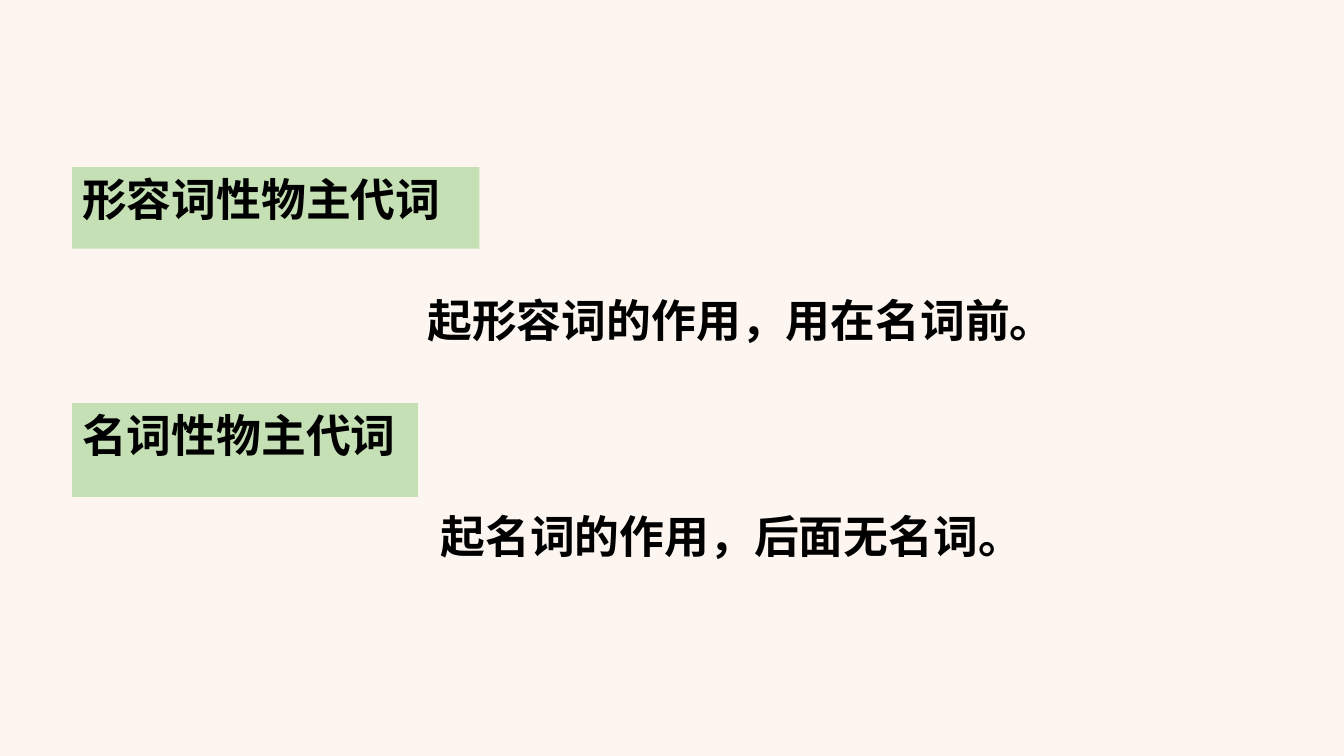
from dataclasses import dataclass

from lxml.etree import SubElement
from pptx import Presentation
from pptx.dml.color import RGBColor
from pptx.enum.shapes import MSO_SHAPE
from pptx.enum.text import MSO_ANCHOR, PP_ALIGN
from pptx.oxml.ns import qn
from pptx.util import Cm, Pt


@dataclass(frozen=True)
class Theme:
    background: RGBColor = RGBColor(0xFD, 0xF5, 0xEF)
    label: RGBColor = RGBColor(0xC5, 0xE0, 0xB4)
    text: RGBColor = RGBColor(0, 0, 0)
    font: str = "Comic Neue"
    size: Pt = Pt(32)


THEME = Theme()


def write_text(sp, text):
    tf = sp.text_frame
    tf.word_wrap = True
    tf.vertical_anchor = MSO_ANCHOR.TOP
    p = tf.paragraphs[0]
    p.text = text
    p.alignment = PP_ALIGN.LEFT
    font = p.font
    font.name = THEME.font
    font.size = THEME.size
    font.bold = True
    font.color.rgb = THEME.text
    # East Asian characters take their typeface from a:ea
    SubElement(p._p.pPr.find(qn("a:defRPr")), qn("a:ea"), typeface=THEME.font)


def add_label(slide, text, box):
    sp = slide.shapes.add_shape(MSO_SHAPE.RECTANGLE, *box)
    sp.shadow.inherit = False
    sp.fill.solid()
    sp.fill.fore_color.rgb = THEME.label
    sp.line.fill.background()
    write_text(sp, text)


def add_term(slide, box, term, label_size, usage, usage_offset):
    """Place a highlighted term at the top left of box and its usage at the bottom right."""
    left, top, width, height = box
    dx, dy = usage_offset
    add_label(slide, term, (left, top, *label_size))
    write_text(slide.shapes.add_textbox(left + dx, top + dy, width - dx, height - dy), usage)


def main():
    prs = Presentation()
    prs.slide_width, prs.slide_height = Cm(33.87), Cm(19.05)
    slide = prs.slides.add_slide(prs.slide_layouts[6])
    fill = slide.background.fill
    fill.solid()
    fill.fore_color.rgb = THEME.background

    left = Cm(1.82)
    add_term(slide, (left, Cm(4.21), Cm(27.24), Cm(5.77)),
             "形容词性物主代词", (Cm(10.26), Cm(2.06)),
             "起形容词的作用，用在名词前。", (Cm(8.7), Cm(3.05)))
    add_term(slide, (left, Cm(10.16), Cm(26.19), Cm(5.33)),
             "名词性物主代词", (Cm(8.71), Cm(2.36)),
             "起名词的作用，后面无名词。", (Cm(9.03), Cm(2.54)))
    prs.save("out.pptx")


if __name__ == "__main__":
    main()
